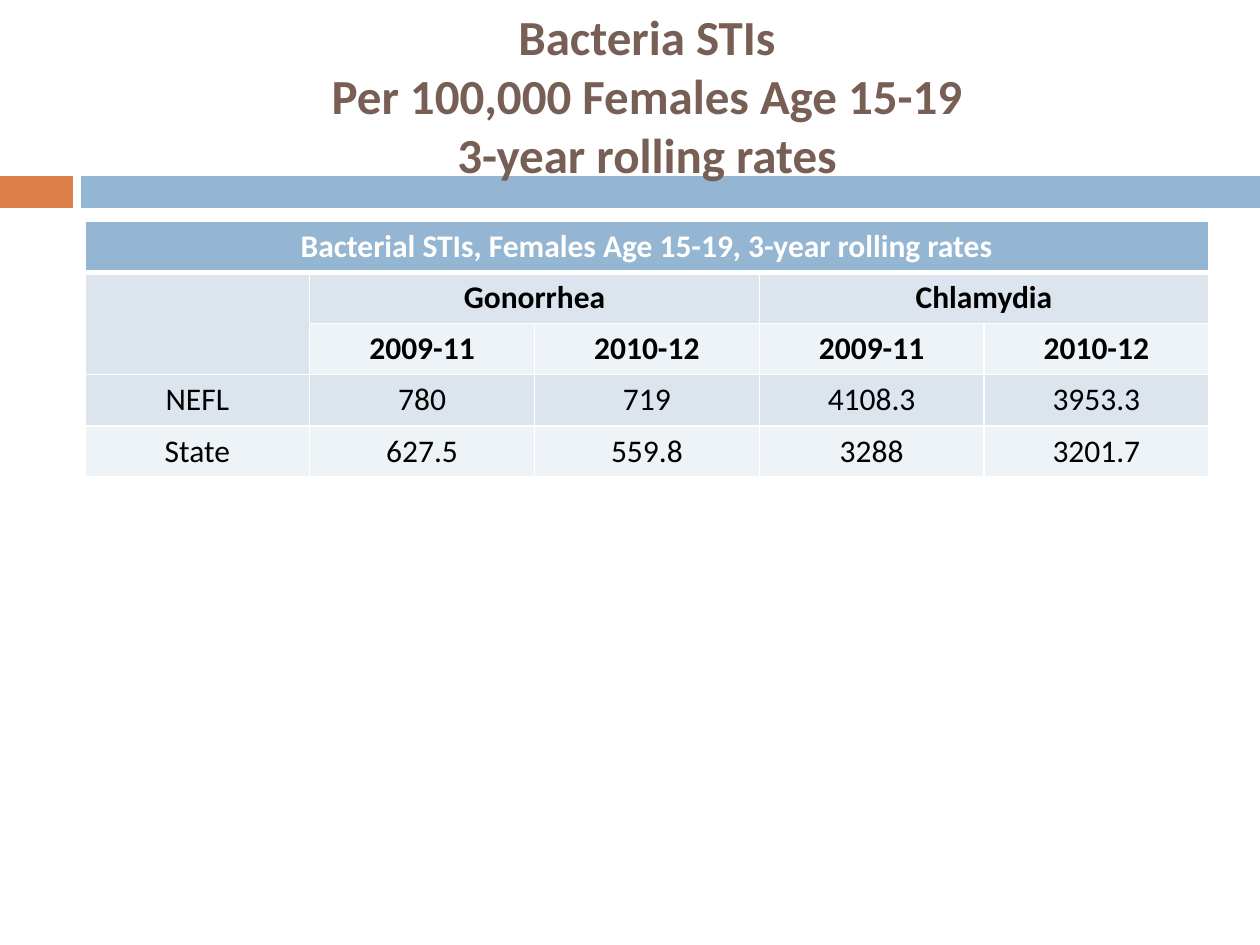
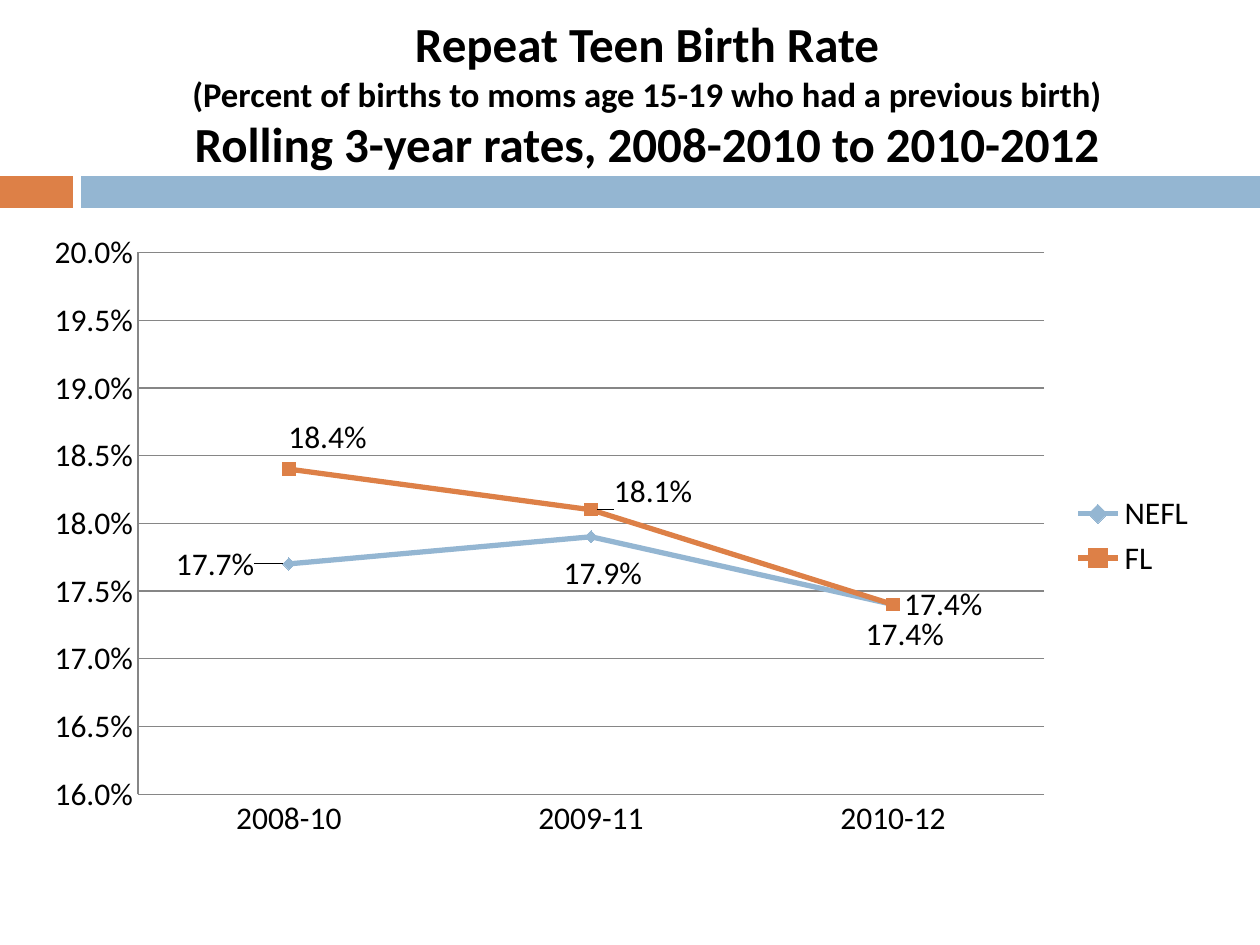
from dataclasses import dataclass

from lxml import etree
from pptx import Presentation
from pptx.chart.data import CategoryChartData
from pptx.dml.color import RGBColor
from pptx.enum.chart import (XL_CHART_TYPE, XL_LABEL_POSITION, XL_LEGEND_POSITION,
                             XL_MARKER_STYLE, XL_TICK_MARK)
from pptx.enum.shapes import MSO_SHAPE
from pptx.enum.text import MSO_ANCHOR, MSO_AUTO_SIZE, PP_ALIGN
from pptx.oxml.ns import qn
from pptx.util import Emu, Pt


@dataclass(frozen=True)
class Theme:
    font: str = "Calibri"
    blue: str = "94B6D2"
    orange: str = "DD8047"
    brown: str = "775F55"
    black: str = "000000"
    white: str = "FFFFFF"
    grey: str = "868686"
    row_dark: str = "DCE5EE"
    row_light: str = "EEF3F7"
    title_size: float = 28
    subtitle_size: float = 19.8
    body_size: float = 18


THEME = Theme()
TITLE_BOX = (85, 32, 1124, 126)
BIRTH_TITLE_BOX = (85, 32, 1124, 136)
BAND_BOX = (0, 176, 1260, 32)
TABLE_BOX = (85, 221, 1124, 256)
CHART_BOX = (32, 221, 1177, 630)


def px(length):
    return Emu(round(length * 914400 / 126))


def rgb(color):
    return RGBColor.from_string(color)


def format_font(font, size=THEME.body_size, color=THEME.black, bold=False):
    font.name, font.size, font.bold = THEME.font, Pt(size), bold
    font.color.rgb = rgb(color)


def write_text(paragraph, text, **font_format):
    paragraph.alignment = PP_ALIGN.CENTER
    run = paragraph.add_run()
    run.text = text
    format_font(run.font, **font_format)


# Shared slide frame: title and two-colour band
def add_title(slide, box, lines, color, margin_bottom=6):
    title = slide.shapes.title
    title.left, title.top, title.width, title.height = map(px, box)
    frame = title.text_frame
    frame.word_wrap = True
    frame.auto_size = MSO_AUTO_SIZE.NONE
    frame.vertical_anchor = MSO_ANCHOR.MIDDLE
    frame.margin_bottom = px(margin_bottom)
    for index, (text, size) in enumerate(lines):
        paragraph = frame.add_paragraph() if index else frame.paragraphs[0]
        write_text(paragraph, text, size=size, color=color, bold=True)


def add_band(slide, box):
    left, top, width, height = box
    block_width, gap = 73, 8
    bar_left = left + block_width + gap
    parts = ((left, block_width, THEME.orange),
             (bar_left, left + width - bar_left, THEME.blue))
    for part_left, part_width, color in parts:
        band = slide.shapes.add_shape(MSO_SHAPE.RECTANGLE, px(part_left), px(top),
                                      px(part_width), px(height))
        band.shadow.inherit = False
        band.fill.solid()
        band.fill.fore_color.rgb = rgb(color)
        band.line.fill.background()
        # The title runs over the band
        slide.shapes.title.element.addprevious(band.element)


def add_framed_slide(presentation, *title_parts, **title_format):
    slide = presentation.slides.add_slide(presentation.slide_layouts[5])
    add_title(slide, *title_parts, **title_format)
    add_band(slide, BAND_BOX)
    return slide


# Rates table
def set_borders(cell, **widths):
    properties = cell._tc.get_or_add_tcPr()
    for side in "LRTB":
        line = etree.SubElement(properties, qn(f"a:ln{side}"),
                                w=str(Pt(widths.get(side, 1))))
        fill = etree.SubElement(line, qn("a:solidFill"))
        etree.SubElement(fill, qn("a:srgbClr"), val=THEME.white)


def add_rates_table(slide, box):
    rows = (
        ("Bacterial STIs, Females Age 15-19, 3-year rolling rates", "", "", "", ""),
        ("", "Gonorrhea", "", "Chlamydia", ""),
        ("", "2009-11", "2010-12", "2009-11", "2010-12"),
        ("NEFL", "780", "719", "4108.3", "3953.3"),
        ("State", "627.5", "559.8", "3288", "3201.7"),
    )
    merges = (((0, 0), (0, 4)), ((1, 0), (2, 0)), ((1, 1), (1, 2)), ((1, 3), (1, 4)))
    table = slide.shapes.add_table(len(rows), len(rows[0]), *map(px, box)).table
    table.first_row = table.horz_banding = False
    for row_index, row in enumerate(rows):
        is_header = row_index == 0
        band_color = THEME.row_dark if row_index % 2 else THEME.row_light
        for column_index, text in enumerate(row):
            cell = table.cell(row_index, column_index)
            set_borders(cell, T=3 if row_index == 1 else 1, B=3 if is_header else 1)
            cell.fill.solid()
            cell.fill.fore_color.rgb = rgb(THEME.blue if is_header else band_color)
            if text:
                write_text(cell.text_frame.paragraphs[0], text, bold=row_index < 3,
                           color=THEME.white if is_header else THEME.black)
    for first, last in merges:
        table.cell(*first).merge(table.cell(*last))


# Birth rate chart
def manual_layout(parent_tag, **values):
    layout = etree.Element(qn("c:layout"))
    manual = etree.SubElement(layout, qn("c:manualLayout"))
    for tag, value in values.items():
        etree.SubElement(manual, qn(f"c:{tag}"), val=str(value))
    parent_tag.addnext(layout)


def style_axis(axis):
    axis.major_tick_mark = axis.minor_tick_mark = XL_TICK_MARK.NONE
    axis.format.line.color.rgb = rgb(THEME.grey)
    axis.format.line.width = Pt(0.75)
    format_font(axis.tick_labels.font)


def style_series(series, color, marker):
    series.smooth = False
    series.format.line.color.rgb = rgb(color)
    series.format.line.width = Pt(3)
    series.marker.style, series.marker.size = marker, 7
    series.marker.format.fill.solid()
    series.marker.format.fill.fore_color.rgb = rgb(color)
    series.marker.format.line.color.rgb = rgb(color)


def label_points(series, labels):
    for index, (position, _, _) in enumerate(labels):
        label = series.points[index].data_label
        format_font(label.font)
        label.position = position
    data_labels = series.data_labels
    data_labels.show_value = True
    data_labels.number_format, data_labels.number_format_is_linked = "0.0%", False
    format_font(data_labels.font)
    indexes = data_labels._element.findall(f"{qn('c:dLbl')}/{qn('c:idx')}")
    for index_tag, (_, shift_x, shift_y) in zip(indexes, labels):
        if shift_x or shift_y:
            manual_layout(index_tag, x=shift_x, y=shift_y)


def add_birth_chart(slide, box):
    left, below, right = (XL_LABEL_POSITION.LEFT, XL_LABEL_POSITION.BELOW,
                          XL_LABEL_POSITION.RIGHT)
    # Name, values, colour, marker, then label side and shift for each point
    series_rows = (
        ("NEFL", (0.177, 0.179, 0.174), THEME.blue, XL_MARKER_STYLE.DIAMOND,
         ((left, -0.02, 0), (below, 0.01, 0.01), (below, 0.01, 0))),
        ("FL", (0.184, 0.181, 0.174), THEME.orange, XL_MARKER_STYLE.SQUARE,
         ((right, -0.01, -0.05), (right, 0.01, -0.03), (right, 0, 0))),
    )
    data = CategoryChartData(number_format="0.0%")
    data.categories = ("2008-10", "2009-11", "2010-12")
    for name, values, *_ in series_rows:
        data.add_series(name, values)
    chart = slide.shapes.add_chart(XL_CHART_TYPE.LINE_MARKERS, *map(px, box), data).chart
    format_font(chart.font, size=10)
    chart.has_title = False
    chart.has_legend = True
    chart.legend.position = XL_LEGEND_POSITION.RIGHT
    chart.legend.include_in_layout = False
    format_font(chart.legend.font)

    style_axis(chart.category_axis)
    axis = chart.value_axis
    style_axis(axis)
    axis.minimum_scale, axis.maximum_scale, axis.major_unit = 0.16, 0.2, 0.005
    axis.tick_labels.number_format = "0.0%"
    axis.tick_labels.number_format_is_linked = False
    axis.has_major_gridlines = True
    axis.major_gridlines.format.line.color.rgb = rgb(THEME.grey)
    axis.major_gridlines.format.line.width = Pt(0.75)

    plot = chart.plots[0]
    plot.vary_by_categories = False
    for series, (_, _, color, marker, labels) in zip(plot.series, series_rows):
        style_series(series, color, marker)
        label_points(series, labels)

    # Fixed inner plot area
    plot_area = chart.element.find(f".//{qn('c:plotArea')}")
    for layout in plot_area.findall(qn("c:layout")):
        plot_area.remove(layout)
    anchor = etree.Element(qn("c:layout"))
    plot_area.insert(0, anchor)
    manual_layout(anchor, layoutTarget="inner", xMode="edge", yMode="edge",
                  x=0.09, y=0.05, w=0.77, h=0.86)
    plot_area.remove(anchor)


def build_infection_slide(presentation):
    lines = [(text, THEME.title_size) for text in (
        "Bacteria STIs", "Per 100,000 Females Age 15-19", "3-year rolling rates")]
    slide = add_framed_slide(presentation, TITLE_BOX, lines, THEME.brown)
    add_rates_table(slide, TABLE_BOX)


def build_birth_slide(presentation):
    lines = (
        ("Repeat Teen Birth Rate", THEME.title_size),
        ("(Percent of births to moms age 15-19 who had a previous birth)",
         THEME.subtitle_size),
        ("Rolling 3-year rates, 2008-2010 to 2010-2012", THEME.title_size),
    )
    slide = add_framed_slide(presentation, BIRTH_TITLE_BOX, lines, THEME.black,
                             margin_bottom=20)
    add_birth_chart(slide, CHART_BOX)


def main():
    presentation = Presentation()
    presentation.slide_width, presentation.slide_height = px(1260), px(945)
    build_infection_slide(presentation)
    build_birth_slide(presentation)
    presentation.save("out.pptx")


if __name__ == "__main__":
    main()
